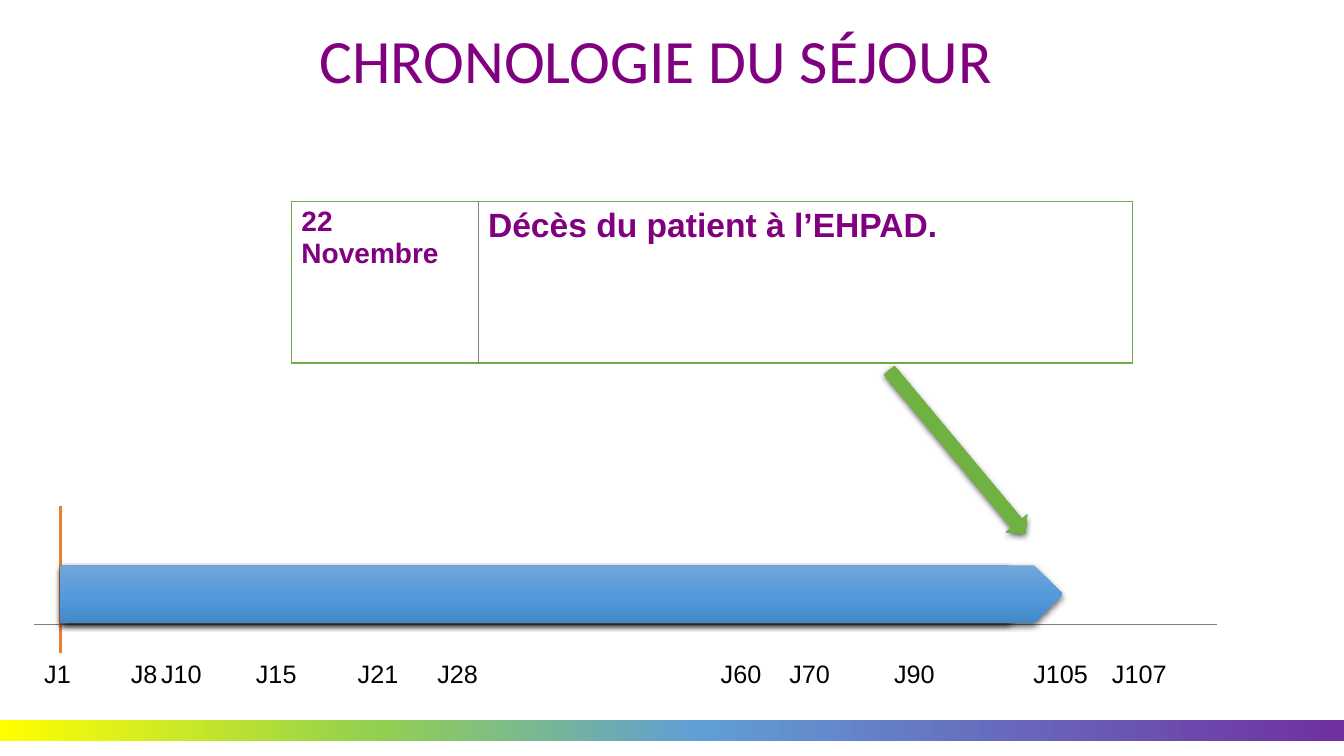
from lxml import etree
from pptx import Presentation
from pptx.dml.color import RGBColor
from pptx.enum.shapes import MSO_CONNECTOR, MSO_SHAPE
from pptx.enum.text import MSO_ANCHOR, MSO_AUTO_SIZE, PP_ALIGN
from pptx.oxml.ns import qn
from pptx.util import Inches, Pt

LINE = MSO_CONNECTOR.STRAIGHT
RECT, PENTAGON, ARROW = MSO_SHAPE.RECTANGLE, MSO_SHAPE.PENTAGON, MSO_SHAPE.RIGHT_ARROW
LEFT, TOP, MIDDLE = PP_ALIGN.LEFT, MSO_ANCHOR.TOP, MSO_ANCHOR.MIDDLE
GROW = MSO_AUTO_SIZE.SHAPE_TO_FIT_TEXT

PURPLE = RGBColor(0x80, 0x00, 0x80)
BLACK = RGBColor(0x00, 0x00, 0x00)
ORANGE = RGBColor(0xED, 0x7D, 0x31)
GRAY = RGBColor(0x80, 0x80, 0x80)
GREEN = RGBColor(0x70, 0xAD, 0x47)
RAINBOW = [(0, RGBColor(0x70, 0x30, 0xA0)), (48, RGBColor(0x60, 0x9E, 0xD6)),
           (72, RGBColor(0x92, 0xD0, 0x50)), (100, RGBColor(0xFF, 0xFF, 0x00))]
BLUES = [(0, RGBColor(0x71, 0xA6, 0xDB)), (50, RGBColor(0x55, 0x9B, 0xDB)),
         (100, RGBColor(0x44, 0x8A, 0xCA))]
GREENS = [(0, RGBColor(0x81, 0xB8, 0x61)), (50, RGBColor(0x6F, 0xB2, 0x42)),
          (100, RGBColor(0x62, 0xA3, 0x36))]

TITLE = "CHRONOLOGIE DU SÉJOUR"
EVENT = [("22 Novembre", 20, 1.85), ("Décès du patient à l’EHPAD.", 24, 6.49)]
EVENT_LEFT, EVENT_TOP, EVENT_HEIGHT = 2.89, 2, 1.6
DAYS = [("J1", 0.34, 0.69), ("J8", 1.2, 0.51), ("J10", 1.5, 0.63),
        ("J15", 2.44, 0.63), ("J21", 3.45, 0.63), ("J28", 4.24, 0.63),
        ("J60", 7.05, 0.63), ("J70", 7.73, 0.63), ("J90", 8.77, 0.63),
        ("J105", 10.15, 0.75), ("J107", 10.93, 0.75)]
DAY_TOP, DAY_HEIGHT = 6.48, 0.4
AXES = [((0.6, 5.02), (0.6, 6.48), ORANGE, 1.5),
        ((0.34, 6.19), (12.07, 6.19), GRAY, 0.5)]
STAY_LEFT, STAY_TOP, STAY_HEIGHT = 0.6, 5.61, 0.57
STAY_WIDTHS = [9.68, 9.94]


def set_format(target, **values):
    for name, value in values.items():
        setattr(target, name, value)


def write(tf, text, size, color, font="Arial", bold=False):
    p = tf.paragraphs[0]
    p.alignment = LEFT
    r = p.add_run()
    r.text = text
    set_format(r.font, name=font, size=Pt(size), bold=bold)
    r.font.color.rgb = color


def add_gradient_shape(slide, kind, box, stops, angle, shadow=True, rotation=0):
    sp = slide.shapes.add_shape(kind, *map(Inches, box))
    sp.rotation = rotation
    sp.shadow.inherit = False
    sp.line.fill.background()
    sp.fill.gradient()
    grad = sp._element.spPr.find(qn("a:gradFill"))
    for child in list(grad):
        grad.remove(child)
    stop_list = etree.SubElement(grad, qn("a:gsLst"))
    for position, color in stops:
        stop = etree.SubElement(stop_list, qn("a:gs"), pos=str(position * 1000))
        etree.SubElement(stop, qn("a:srgbClr"), val=str(color))
    etree.SubElement(grad, qn("a:lin"), ang=str(angle * 60000), scaled="0")
    if shadow:
        effects = sp._element.spPr.find(qn("a:effectLst"))
        outer = etree.SubElement(effects, qn("a:outerShdw"), blurRad=str(Pt(4.5)),
                                 dist=str(Pt(1.5)), dir="5400000", algn="ctr",
                                 rotWithShape="0")
        shade = etree.SubElement(outer, qn("a:srgbClr"), val=str(BLACK))
        etree.SubElement(shade, qn("a:alpha"), val="63000")


def set_borders(cell, borders):
    tcPr = cell._tc.get_or_add_tcPr()
    for i, (side, color, width) in enumerate(borders):
        ln = etree.Element(qn(f"a:ln{side}"), w=str(Pt(width)))
        fill = etree.SubElement(ln, qn("a:solidFill"))
        etree.SubElement(fill, qn("a:srgbClr"), val=str(color))
        tcPr.insert(i, ln)


def add_event(slide):
    total = sum(width for _, _, width in EVENT)
    table = slide.shapes.add_table(1, len(EVENT), Inches(EVENT_LEFT), Inches(EVENT_TOP),
                                   Inches(total), Inches(EVENT_HEIGHT)).table
    set_format(table, first_row=False, horz_banding=False)
    last = len(EVENT) - 1
    for i, (text, size, width) in enumerate(EVENT):
        table.columns[i].width = Inches(width)
        cell = table.cell(0, i)
        cell.vertical_anchor = TOP
        cell.fill.background()
        left = (GREEN, 1) if i == 0 else (GRAY, 0.5)
        right = (GREEN, 1) if i == last else (GRAY, 0.5)
        set_borders(cell, [("L", *left), ("R", *right), ("T", GREEN, 1), ("B", GREEN, 2)])
        write(cell.text_frame, text, size, PURPLE, bold=True)


def main():
    prs = Presentation()
    set_format(prs, slide_width=Inches(13.33), slide_height=Inches(7.5))
    slide = prs.slides.add_slide(prs.slide_layouts[5])
    add_gradient_shape(slide, RECT, (0, 7.14, 13.33, 0.21), RAINBOW, 180, shadow=False)

    title = slide.shapes.title
    set_format(title, left=Inches(3.07), top=Inches(0.16),
               width=Inches(9.89), height=Inches(0.84))
    set_format(title.text_frame, word_wrap=True, vertical_anchor=MIDDLE)
    write(title.text_frame, TITLE, 44, PURPLE, "Calibri")

    for start, end, color, width in AXES:
        axis = slide.shapes.add_connector(LINE, *map(Inches, start + end))
        axis.line.color.rgb = color
        axis.line.width = Pt(width)
        etree.SubElement(axis._element.spPr, qn("a:effectLst"))

    for day, left, width in DAYS:
        label = slide.shapes.add_textbox(*map(Inches, (left, DAY_TOP, width, DAY_HEIGHT)))
        set_format(label.text_frame, word_wrap=True, auto_size=GROW)
        write(label.text_frame, day, 18, BLACK)

    add_gradient_shape(slide, ARROW, (8.44, 4.35, 2.11, 0.27), GREENS, 90, rotation=50.2)
    for width in STAY_WIDTHS:
        add_gradient_shape(slide, PENTAGON, (STAY_LEFT, STAY_TOP, width, STAY_HEIGHT), BLUES, 90)
    add_event(slide)
    prs.save("out.pptx")


if __name__ == "__main__":
    main()
